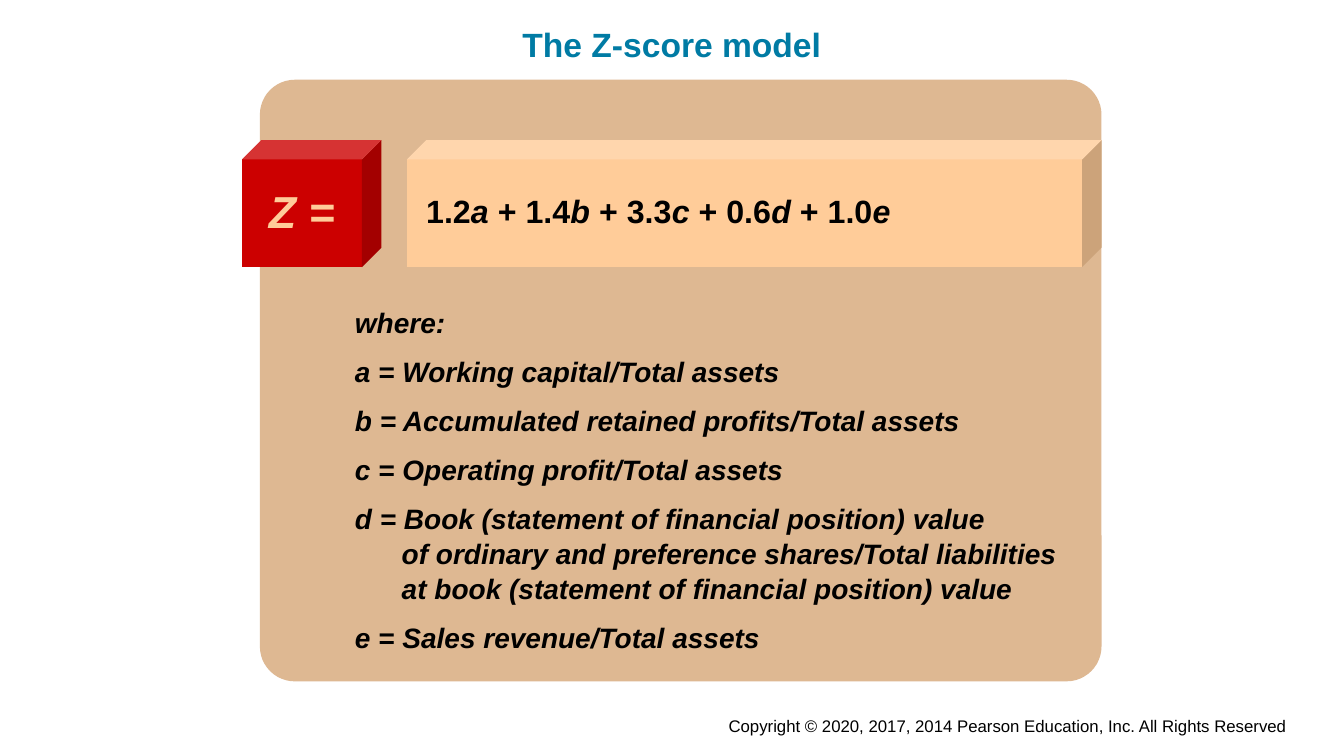
"""Build the Z-score model slide."""
from lxml import etree
from pptx import Presentation
from pptx import util as u
from pptx.dml.color import RGBColor
from pptx.enum import shapes, text
from pptx.oxml.ns import qn

COLOURS = {"title": "007BA4", "panel": "DEB892", "red": "CC0000",
           "peach": "FFCC99", "black": "000000"}
DEFINITIONS = (
    "where:",
    "a = Working capital/Total assets",
    "b = Accumulated retained profits/Total assets",
    "c = Operating profit/Total assets",
    "d = Book (statement of financial position) value\n"
    "of ordinary and preference shares/Total liabilities\n"
    "at book (statement of financial position) value",
    "e = Sales revenue/Total assets",
)
WEIGHTS = {"a": "1.2", "b": "1.4", "c": "3.3", "d": "0.6", "e": "1.0"}
CUBE_TOP, CUBE_HEIGHT = 3.53, 3.2


def write(paragraph, words, size=20, colour="black", bold=True, italic=False):
    """Add formatted words to a paragraph, breaking lines at newlines."""
    for index, line in enumerate(words.split("\n")):
        if index:
            paragraph.add_line_break()
        run = paragraph.add_run()
        run.text = line
        font = run.font
        font.name, font.size = "Arial", u.Pt(size)
        font.bold, font.italic = bold, italic
        font.color.rgb = RGBColor.from_string(COLOURS[colour])


class SlideBuilder:
    """Hold the style and the current slide."""

    def __init__(self, presentation):
        """Add a title and content slide."""
        self.slide = presentation.slides.add_slide(presentation.slide_layouts[1])

    def place(self, shape, box):
        """Move a shape to a box in centimetres and return its text frame."""
        shape.left, shape.top, shape.width, shape.height = map(u.Cm, box)
        frame = shape.text_frame
        frame.word_wrap = True
        frame.auto_size = text.MSO_AUTO_SIZE.NONE
        return frame

    def title(self, words, box):
        """Fill the title placeholder."""
        frame = self.place(self.slide.shapes.title, box)
        frame.vertical_anchor = text.MSO_ANCHOR.MIDDLE
        paragraph = frame.paragraphs[0]
        paragraph.alignment = text.PP_ALIGN.CENTER
        write(paragraph, words, size=24, colour="title")

    def definitions(self, lines, box):
        """Fill the body placeholder with unbulleted hanging lines."""
        frame = self.place(self.slide.placeholders[1], box)
        frame.vertical_anchor = text.MSO_ANCHOR.TOP
        for index, line in enumerate(lines):
            paragraph = frame.add_paragraph() if index else frame.paragraphs[0]
            properties = paragraph._p.get_or_add_pPr()
            properties.set("marL", str(u.Cm(1.18)))
            properties.set("indent", str(u.Cm(-1.18)))
            etree.SubElement(properties, qn("a:buNone"))
            paragraph.line_spacing = 1.04
            paragraph.space_before = u.Pt(10 if index else 0)
            write(paragraph, line, italic=True)

    def block(self, kind, box, colour, adjustment):
        """Add a plain filled shape."""
        shape = self.slide.shapes.add_shape(kind, *map(u.Cm, box))
        shape.shadow.inherit = False
        shape.adjustments[0] = adjustment
        shape.fill.solid()
        shape.fill.fore_color.rgb = RGBColor.from_string(COLOURS[colour])
        shape.line.fill.background()
        return shape

    def panel(self, box):
        """Add the rounded panel behind everything else."""
        panel = self.block(shapes.MSO_SHAPE.ROUNDED_RECTANGLE, box, "panel", 0.058)
        self.slide.shapes._spTree.insert(2, panel._element)

    def cube(self, left, width, colour):
        """Add a cube in the formula row."""
        self.block(shapes.MSO_SHAPE.CUBE, (left, CUBE_TOP, width, CUBE_HEIGHT),
                   colour, 0.152)

    def label(self, box, alignment=text.PP_ALIGN.LEFT, inset=0.25):
        """Add a text box and return its first paragraph."""
        frame = self.place(self.slide.shapes.add_textbox(0, 0, 0, 0), box)
        frame.margin_left = u.Cm(inset)
        paragraph = frame.paragraphs[0]
        paragraph.alignment = alignment
        return paragraph


def main():
    """Assemble and save the slide."""
    presentation = Presentation()
    presentation.slide_width, presentation.slide_height = u.Cm(33.87), u.Cm(19.05)
    builder = SlideBuilder(presentation)
    builder.panel((6.55, 2.01, 21.21, 15.16))
    builder.title("The Z-score model", (7.06, 0.48, 19.74, 1.27))
    builder.definitions(DEFINITIONS, (8.69, 7.54, 18.52, 9.14))
    builder.cube(6.1, 3.51, "red")
    builder.cube(10.26, 17.5, "peach")

    formula = builder.label((10.26, 4.7, 17.2, 1.22), inset=0.48)
    for index, (variable, weight) in enumerate(WEIGHTS.items()):
        write(formula, f" + {weight}" if index else weight, size=23)
        write(formula, variable, size=23, italic=True)

    score = builder.label((6.15, 4.5, 2.92, 1.6), text.PP_ALIGN.CENTER)
    write(score, "Z =", size=32, colour="peach", italic=True)

    copyright_line = builder.label((0.69, 17.91, 32, 0.53), text.PP_ALIGN.RIGHT)
    write(copyright_line, "Copyright © 2020, 2017, 2014 Pearson Education, Inc. "
          "All Rights Reserved", size=12, bold=False)
    presentation.save("out.pptx")


if __name__ == "__main__":
    main()
